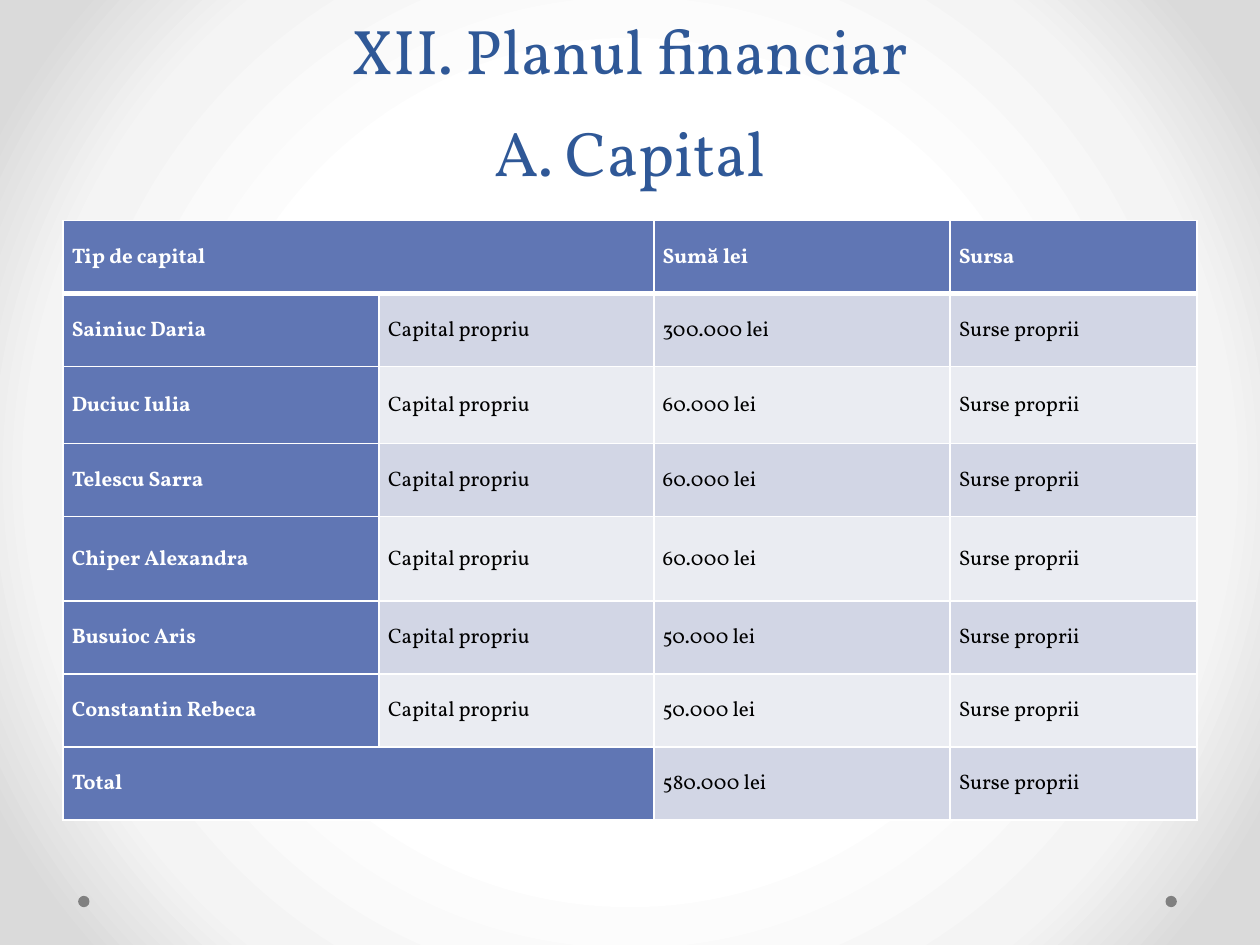
from dataclasses import dataclass

from pptx import Presentation
from pptx.dml.color import RGBColor
from pptx.enum.shapes import MSO_SHAPE
from pptx.enum.text import MSO_ANCHOR, MSO_AUTO_SIZE, PP_ALIGN
from pptx.oxml import parse_xml
from pptx.oxml.ns import nsdecls
from pptx.util import Inches, Pt

FONT = "Vollkorn"
WHITE, BLACK, BLUE, TITLE_BLUE = "FFFFFF", "000000", "6076B4", "2F5897"
BANDS = ("D2D6E5", "EAECF2")
DOT_GRAY = "808080"
COL_WIDTHS = (2.51, 2.18, 2.35, 1.96)
ROW_HEIGHTS = (0.58, 0.58, 0.61, 0.58, 0.67, 0.58, 0.58, 0.58)


@dataclass
class Contribution:
    name: str
    amount: str
    kind: str = "Capital propriu"
    source: str = "Surse proprii"


CONTRIBUTIONS = (
    Contribution("Sainiuc Daria", "300.000 lei"),
    Contribution("Duciuc Iulia", "60.000 lei"),
    Contribution("Telescu Sarra", "60.000 lei"),
    Contribution("Chiper Alexandra", "60.000 lei"),
    Contribution("Busuioc Aris", "50.000 lei"),
    Contribution("Constantin Rebeca", "50.000 lei"),
    Contribution("Total", "580.000 lei", kind=""),
)


def rgb(color: str) -> RGBColor:
    return RGBColor.from_string(color)


def write(tf, text: str, *, size: float, color: str, bold: bool = False,
          align=PP_ALIGN.JUSTIFY, spacing=1.07) -> None:
    p = tf.paragraphs[0]
    p.alignment, p.line_spacing = align, spacing
    for i, line in enumerate(text.split("\n")):
        if i:
            p.add_line_break()
        r = p.add_run()
        r.text = line
        r.font.name, r.font.size, r.font.bold = FONT, Pt(size), bold
        r.font.color.rgb = rgb(color)


def set_background(s) -> None:
    stops = "".join(
        f'<a:gs pos="{pos}000"><a:srgbClr val="{color}"/></a:gs>'
        for pos, color in ((50, WHITE), (76, "F4F4F4"), (92, "DADADA")))
    s.element.cSld.insert(0, parse_xml(
        f'<p:bg {nsdecls("p", "a")}><p:bgPr><a:gradFill rotWithShape="1">'
        f'<a:gsLst>{stops}</a:gsLst><a:path path="circle">'
        '<a:fillToRect l="50000" t="50000" r="50000" b="50000"/></a:path>'
        '</a:gradFill><a:effectLst/></p:bgPr></p:bg>'))


def add_dot(s, left: float) -> None:
    sp = s.shapes.add_shape(MSO_SHAPE.OVAL, Inches(left), Inches(7.11),
                            Inches(0.09), Inches(0.09))
    sp.shadow.inherit = False
    sp.fill.solid()
    sp.fill.fore_color.rgb = rgb(DOT_GRAY)
    sp.line.fill.background()


def set_borders(cell, **widths: float) -> None:
    """Draw white borders; widths in points, keyed by side L, R, T, B."""
    tc_pr = cell._tc.get_or_add_tcPr()
    for i, side in enumerate("LRTB"):
        tc_pr.insert(i, parse_xml(
            f'<a:ln{side} {nsdecls("a")} w="{Pt(widths.get(side, 1))}">'
            f'<a:solidFill><a:srgbClr val="{WHITE}"/></a:solidFill></a:ln{side}>'))


def fill_cell(cell, text: str, row: int, col: int) -> None:
    strong = row == 0 or col == 0
    cell.fill.solid()
    cell.fill.fore_color.rgb = rgb(BLUE if strong else BANDS[(row - 1) % 2])
    cell.vertical_anchor = MSO_ANCHOR.MIDDLE
    cell.margin_left = cell.margin_right = Inches(0.07)
    cell.margin_top = cell.margin_bottom = 0
    # A thicker rule separates the header from the body
    set_borders(cell, **{0: {"B": 3}, 1: {"T": 3}}.get(row, {}))
    if text:
        write(cell.text_frame, text, size=12, bold=strong,
              color=WHITE if strong else BLACK)


def add_capital_table(s) -> None:
    rows = [("Tip de capital", "", "Sumă lei", "Sursa")]
    rows += [(c.name, c.kind, c.amount, c.source) for c in CONTRIBUTIONS]
    table = s.shapes.add_table(
        len(rows), len(COL_WIDTHS), Inches(0.5), Inches(1.75),
        Inches(sum(COL_WIDTHS)), Inches(sum(ROW_HEIGHTS))).table
    for column, width in zip(table.columns, COL_WIDTHS):
        column.width = Inches(width)
    for i, (values, height) in enumerate(zip(rows, ROW_HEIGHTS)):
        table.rows[i].height = Inches(height)
        for j, text in enumerate(values):
            fill_cell(table.cell(i, j), text, i, j)
        if not values[1]:
            table.cell(i, 0).merge(table.cell(i, 1))


def main() -> None:
    prs = Presentation()
    prs.slide_width, prs.slide_height = Inches(10), Inches(7.5)
    s = prs.slides.add_slide(prs.slide_layouts[5])
    set_background(s)

    # Footer dots
    for left in (0.62, 9.25):
        add_dot(s, left)

    # Title
    title = s.shapes.title
    title.left, title.top = Inches(0.5), Inches(0.21)
    title.width, title.height = Inches(9), Inches(1.34)
    tf = title.text_frame
    tf.auto_size = MSO_AUTO_SIZE.NONE
    tf.vertical_anchor = MSO_ANCHOR.BOTTOM
    write(tf, "XII. Planul financiar\nA. Capital", size=36, color=TITLE_BLUE,
          align=PP_ALIGN.CENTER, spacing=Pt(58))

    add_capital_table(s)
    prs.save("out.pptx")


if __name__ == "__main__":
    main()
